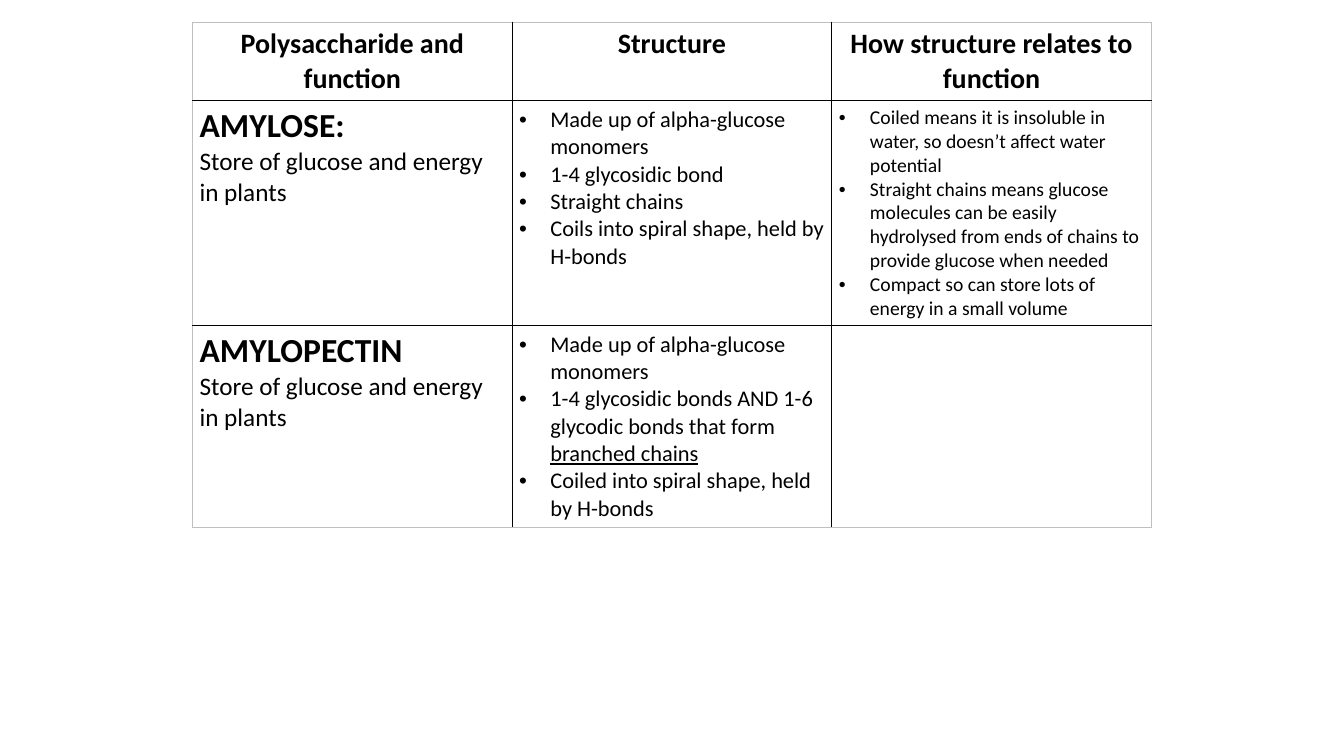
from dataclasses import dataclass

from lxml.etree import SubElement
from pptx import Presentation
from pptx.dml.color import RGBColor
from pptx.enum.text import PP_ALIGN
from pptx.oxml.ns import qn
from pptx.table import _Cell
from pptx.util import Inches, Pt

BLACK = RGBColor(0, 0, 0)
WHITE = RGBColor(255, 255, 255)
GREY = RGBColor(0xBF, 0xBF, 0xBF)
FONT = "Calibri"
WIDTH = 3.17
HEIGHTS = (0.78, 2.23, 2.0)


@dataclass(frozen=True)
class Run:
    text: str
    size: int
    bold: bool = False
    under: bool = False


@dataclass(frozen=True)
class Para:
    runs: tuple[Run, ...]
    center: bool = False
    bullet: bool = False


def head(text: str) -> list[Para]:
    return [Para((Run(text, 20, bold=True),), center=True)]


def sugar(name: str) -> list[Para]:
    use = Run("Store of glucose and energy in plants", 18)
    return [Para((Run(name, 24, bold=True),)), Para((use,))]


def point(text: str, size: int, tail: str = "") -> Para:
    runs = (Run(text, size),)
    if tail:
        runs += (Run(tail, size, under=True),)
    return Para(runs, bullet=True)


ROWS = [
    [
        head("Polysaccharide and function"),
        head("Structure"),
        head("How structure relates to function"),
    ],
    [
        sugar("AMYLOSE:"),
        [
            point("Made up of alpha-glucose monomers", 16),
            point("1-4 glycosidic bond", 16),
            point("Straight chains", 16),
            point("Coils into spiral shape, held by H-bonds", 16),
        ],
        [
            point("Coiled means it is insoluble in water, so doesn’t affect water potential", 14),
            point("Straight chains means glucose molecules can be easily hydrolysed "
                  "from ends of chains to provide glucose when needed", 14),
            point("Compact so can store lots of energy in a small volume", 14),
        ],
    ],
    [
        sugar("AMYLOPECTIN"),
        [
            point("Made up of alpha-glucose monomers", 16),
            point("1-4 glycosidic bonds AND 1-6 glycodic bonds that form ", 16, "branched chains"),
            point("Coiled into spiral shape, held by H-bonds", 16),
        ],
        [],
    ],
]


def write(cell: _Cell, paras: list[Para]) -> None:
    frame = cell.text_frame
    for i, para in enumerate(paras):
        line = frame.add_paragraph() if i else frame.paragraphs[0]
        line.alignment = PP_ALIGN.CENTER if para.center else PP_ALIGN.LEFT
        if para.bullet:
            props = line._p.get_or_add_pPr()
            props.set("marL", str(Inches(0.31)))
            props.set("indent", str(Inches(-0.31)))
            SubElement(props, qn("a:buFont"), typeface="Arial")
            SubElement(props, qn("a:buChar"), char="•")
        for part in para.runs:
            run = line.add_run()
            run.text = part.text
            run.font.name = FONT
            run.font.size = Pt(part.size)
            run.font.bold = part.bold
            run.font.underline = part.under
            run.font.color.rgb = BLACK


def edge(cell: _Cell, outer: dict[str, bool]) -> None:
    props = cell._tc.get_or_add_tcPr()
    for i, (side, rim) in enumerate(outer.items()):
        line = props.makeelement(qn(f"a:ln{side}"), {"w": str(Pt(1))})
        fill = SubElement(line, qn("a:solidFill"))
        SubElement(fill, qn("a:srgbClr"), val=str(GREY if rim else BLACK))
        props.insert(i, line)


def main() -> None:
    deck = Presentation()
    deck.slide_width = Inches(13.33)
    deck.slide_height = Inches(7.5)
    slide = deck.slides.add_slide(deck.slide_layouts[6])
    count, span = len(ROWS), len(ROWS[0])
    table = slide.shapes.add_table(
        count, span, Inches(1.91), Inches(0.22),
        Inches(WIDTH * span), Inches(sum(HEIGHTS)),
    ).table
    table.first_row = False
    table.horz_banding = False
    for col in table.columns:
        col.width = Inches(WIDTH)
    for y, (row, high) in enumerate(zip(ROWS, HEIGHTS)):
        table.rows[y].height = Inches(high)
        for x, paras in enumerate(row):
            cell = table.cell(y, x)
            cell.margin_left = cell.margin_right = Inches(0.07)
            cell.margin_top = cell.margin_bottom = Inches(0.05)
            cell.fill.solid()
            cell.fill.fore_color.rgb = WHITE
            edge(cell, {"L": x == 0, "R": x == span - 1, "T": y == 0, "B": y == count - 1})
            write(cell, paras)
    deck.save("out.pptx")


if __name__ == "__main__":
    main()
